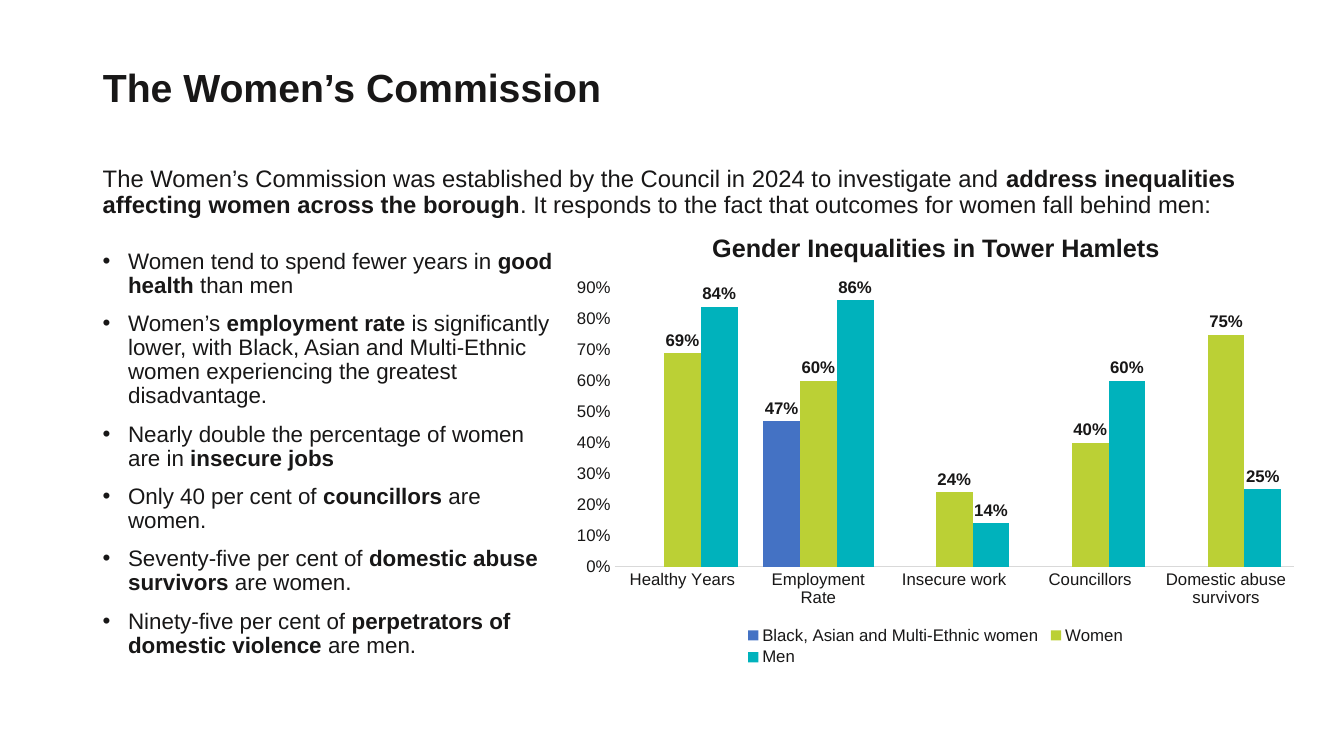
"""Build the Women's Commission slide with its bullets and inequality chart."""
from lxml.etree import SubElement
from pptx import Presentation
from pptx.chart.data import CategoryChartData
from pptx.dml.color import RGBColor
from pptx.enum.chart import XL_CHART_TYPE as ChartType, XL_LABEL_POSITION as LabelPosition
from pptx.enum.chart import XL_LEGEND_POSITION as LegendPosition, XL_TICK_MARK as TickMark
from pptx.enum.text import MSO_ANCHOR as Anchor, MSO_AUTO_SIZE as AutoSize, PP_ALIGN as Align
from pptx.oxml.ns import qn
from pptx.util import Cm, Pt

FONT = "Arial"
INK = RGBColor(0x18, 0x17, 0x17)
AXIS_LINE = RGBColor(0xD9, 0xD9, 0xD9)
BLUE = RGBColor(0x44, 0x72, 0xC4)
LIME = RGBColor(0xBB, 0xD0, 0x35)
TEAL = RGBColor(0x00, 0xB2, 0xBC)

TITLE = "The Women’s Commission"
INTRODUCTION = (
    "The Women’s Commission was established by the Council in 2024 to investigate and "
    "**address inequalities affecting women across the borough**. "
    "It responds to the fact that outcomes for women fall behind men:"
)
FINDINGS = [
    "Women tend to spend fewer years in **good health **than men",
    "Women’s **employment rate **is significantly lower, with Black, Asian and "
    "Multi-Ethnic women experiencing the greatest disadvantage.",
    "Nearly double the percentage of women are in **insecure jobs**",
    "Only 40 per cent of **councillors** are women.",
    "Seventy-five per cent of **domestic abuse survivors** are women.",
    "Ninety-five per cent of **perpetrators of domestic violence **are men.",
]
CHART_TITLE = "Gender Inequalities in Tower Hamlets"
CATEGORIES = ["Healthy Years", "Employment Rate", "Insecure work", "Councillors",
              "Domestic abuse survivors"]
SERIES = [
    ("Black, Asian and Multi-Ethnic women", BLUE, [None, 0.47, None, None, None]),
    ("Women", LIME, [0.69, 0.60, 0.24, 0.40, 0.75]),
    ("Men", TEAL, [0.84, 0.86, 0.14, 0.60, 0.25]),
]


def format_font(font, size, bold=False):
    """Give a font the slide's typeface and colour."""
    font.name = FONT
    font.size = Pt(size)
    font.bold = bold
    font.color.rgb = INK


def write_paragraph(paragraph, text, size, bold=False, line_spacing=0.9, space_before=0,
                    bullet=False):
    """Write text into a paragraph, with bold parts between double asterisks."""
    paragraph.alignment = Align.LEFT
    paragraph.line_spacing = line_spacing
    paragraph.space_before = Pt(space_before)
    if bullet:
        properties = paragraph._p.get_or_add_pPr()
        indent = Cm(0.64)
        properties.set("marL", str(indent))
        properties.set("indent", str(-indent))
        SubElement(properties, qn("a:buFont"), typeface=FONT)
        SubElement(properties, qn("a:buChar"), char="•")
    for index, part in enumerate(text.split("**")):
        if part:
            run = paragraph.add_run()
            run.text = part
            format_font(run.font, size, bold or index % 2 == 1)


def add_text(slide, box, texts, **style):
    """Add a wrapping text box with one paragraph per text."""
    frame = slide.shapes.add_textbox(*map(Cm, box)).text_frame
    frame.word_wrap = True
    for index, text in enumerate(texts):
        paragraph = frame.add_paragraph() if index else frame.paragraphs[0]
        write_paragraph(paragraph, text, **style)


def set_title(slide, box, text):
    """Move and format the title placeholder."""
    title = slide.shapes.title
    title.left, title.top, title.width, title.height = map(Cm, box)
    frame = title.text_frame
    frame.word_wrap = True
    frame.auto_size = AutoSize.NONE
    frame.vertical_anchor = Anchor.MIDDLE
    write_paragraph(frame.paragraphs[0], text, size=28, bold=True)


def place_chart_part(part, position, box, inner=False):
    """Fix a chart part at fractions of the chart's width and height."""
    for old_layout in part.findall(qn("c:layout")):
        part.remove(old_layout)
    layout = SubElement(part, qn("c:layout"))
    part.insert(position, layout)
    manual = SubElement(layout, qn("c:manualLayout"))
    if inner:
        SubElement(manual, qn("c:layoutTarget"), val="inner")
    for mode in ("xMode", "yMode"):
        SubElement(manual, qn(f"c:{mode}"), val="edge")
    for name, fraction in zip("xywh", box):
        SubElement(manual, qn(f"c:{name}"), val=str(fraction))


def format_axes(chart):
    """Style the category and percentage axes."""
    for axis in (chart.category_axis, chart.value_axis):
        axis.major_tick_mark = axis.minor_tick_mark = TickMark.NONE
        axis.has_major_gridlines = False
        format_font(axis.tick_labels.font, 12)
    chart.category_axis.format.line.color.rgb = AXIS_LINE
    chart.category_axis.format.line.width = Pt(0.75)
    percentages = chart.value_axis
    percentages.format.line.fill.background()
    percentages.minimum_scale, percentages.maximum_scale = 0, 0.9
    percentages.major_unit = 0.1
    percentages.tick_labels.number_format = "0%"
    percentages.tick_labels.number_format_is_linked = False


def format_series(series, color):
    """Colour a series and label its columns."""
    series.format.fill.solid()
    series.format.fill.fore_color.rgb = color
    series.invert_if_negative = False
    labels = series.data_labels
    labels.show_value = True
    labels.position = LabelPosition.OUTSIDE_END
    labels.number_format = "0%"
    labels.number_format_is_linked = False
    format_font(labels.font, 12, bold=True)


def add_inequality_chart(slide, box):
    """Add the clustered column chart."""
    data = CategoryChartData(number_format="0%")
    data.categories = CATEGORIES
    for name, _, values in SERIES:
        data.add_series(name, values)
    chart = slide.shapes.add_chart(ChartType.COLUMN_CLUSTERED, *map(Cm, box), data).chart
    chart.has_title = False
    format_font(chart.font, 10)
    plot = chart.plots[0]
    plot.gap_width, plot.overlap = 70, 0
    plot.vary_by_categories = False
    for series, (_, color, _) in zip(plot.series, SERIES):
        format_series(series, color)
    format_axes(chart)
    chart.has_legend = True
    legend = chart.legend
    legend.position = LegendPosition.BOTTOM
    legend.include_in_layout = False
    format_font(legend.font, 12)
    place_chart_part(chart._chartSpace.chart.plotArea, 0, (0.07, 0.04, 0.91, 0.7), inner=True)
    place_chart_part(legend._element, 1, (0.24, 0.88, 0.52, 0.12))


def main():
    """Build and save the slide."""
    presentation = Presentation()
    presentation.slide_width, presentation.slide_height = Cm(33.87), Cm(19.05)
    slide = presentation.slides.add_slide(presentation.slide_layouts[5])
    set_title(slide, (2.34, 1.37, 27.15, 1.78), TITLE)
    add_text(slide, (2.34, 4.09, 29.21, 2.64), [INTRODUCTION], size=17, space_before=10)
    add_text(slide, (2.34, 6.17, 11.89, 9.32), FINDINGS, size=16, space_before=10, bullet=True)
    add_text(slide, (17.7, 5.74, 13.74, 1.02), [CHART_TITLE], size=18, bold=True, line_spacing=1.0)
    add_inequality_chart(slide, (14.17, 6.86, 18.82, 10.03))
    presentation.save("out.pptx")


if __name__ == "__main__":
    main()
